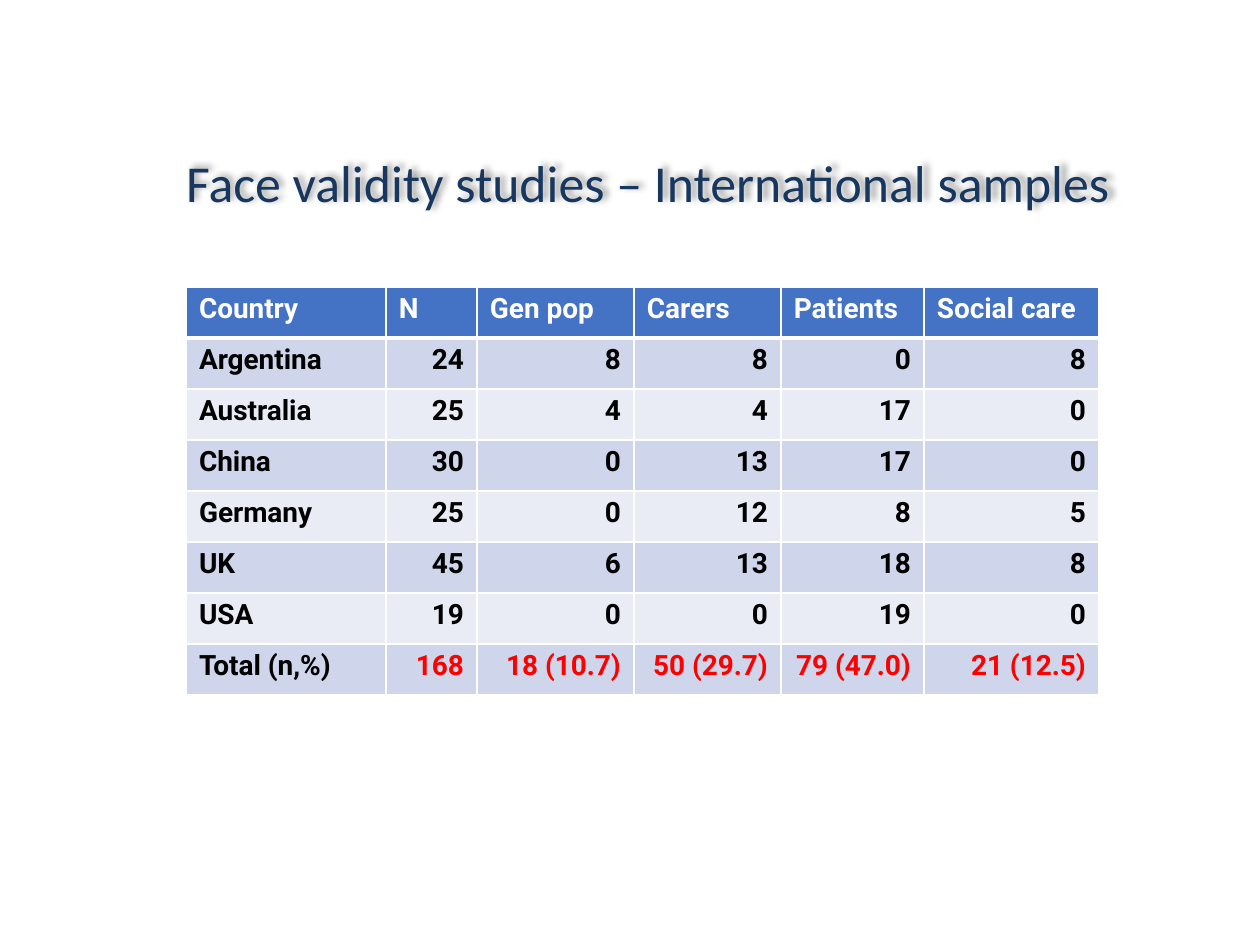
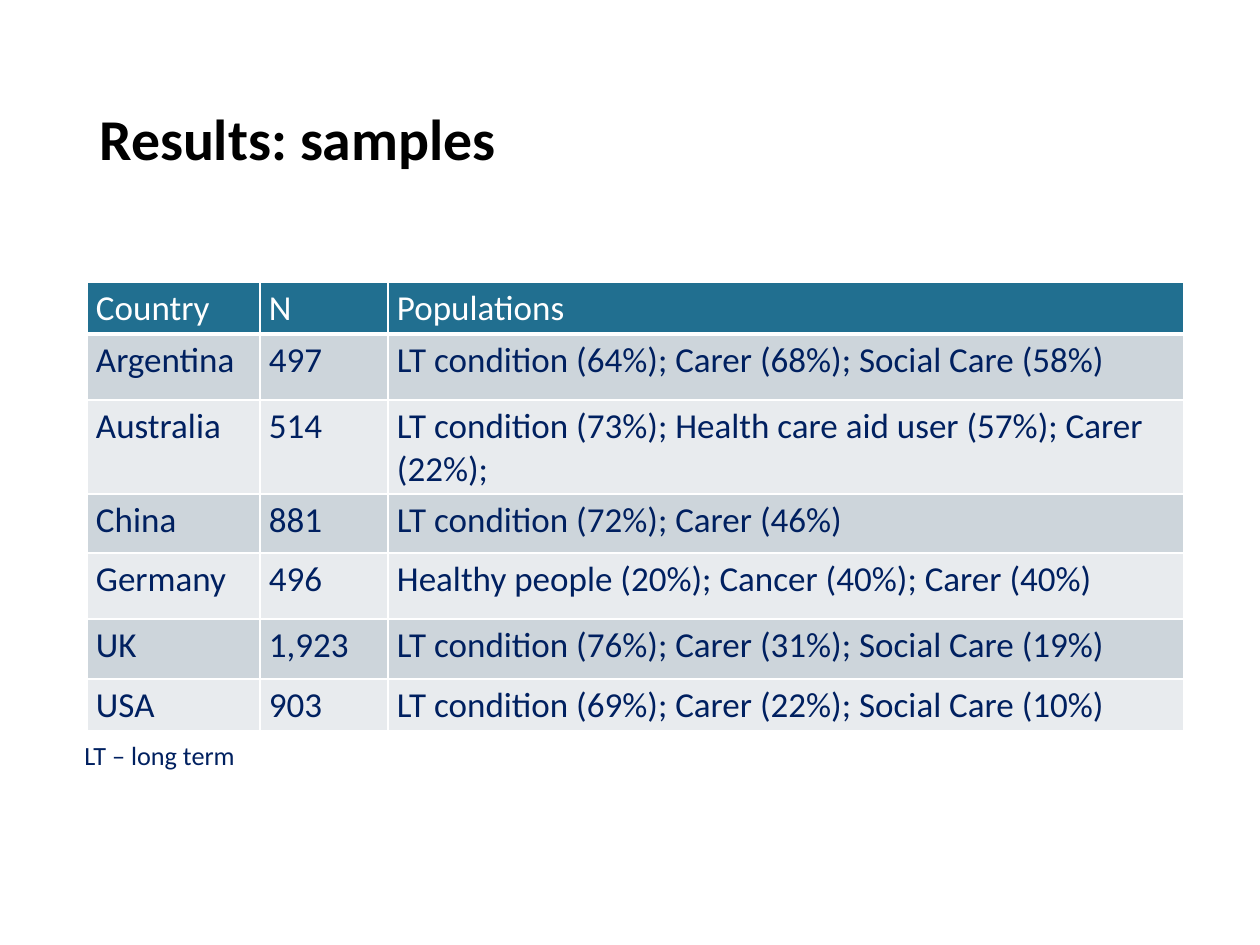
from lxml.etree import SubElement
from pptx import Presentation
from pptx.dml.color import RGBColor
from pptx.enum.text import MSO_ANCHOR, PP_ALIGN
from pptx.oxml import parse_xml
from pptx.oxml.ns import nsdecls, qn
from pptx.util import Emu, Pt

EMU_PER_PX = 914400 / 126
WHITE, BLACK, NAVY, RED = "FFFFFF", "000000", "002060", "FF0000"
TITLE_BLUE = "17375E"


def px(length):
    return Emu(round(length * EMU_PER_PX))


def color(code):
    return RGBColor.from_string(code)


prs = Presentation()
prs.slide_width, prs.slide_height = px(1260), px(945)
blank = prs.slide_layouts[6]

# Content of both slides
face_validity = dict(
    texts=[("Face validity studies – International samples", (100, 146, 1097, 72),
            29.6, TITLE_BLUE, False, PP_ALIGN.CENTER, 1.0, True)],
    origin=(186, 287), columns=[200, 91, 157, 147, 143, 175], heights=[51] * 8,
    margins=(13, 6), font="Roboto", size=16, bold=True, space_after=0,
    number_align=PP_ALIGN.RIGHT, body=BLACK, total=RED,
    header_fill="4472C4", bands=("CFD5EA", "E9EBF5"),
    rows=[
        ("Country", "N", "Gen pop", "Carers", "Patients", "Social care"),
        ("Argentina", "24", "8", "8", "0", "8"),
        ("Australia", "25", "4", "4", "17", "0"),
        ("China", "30", "0", "13", "17", "0"),
        ("Germany", "25", "0", "12", "8", "5"),
        ("UK", "45", "6", "13", "18", "8"),
        ("USA", "19", "0", "0", "19", "0"),
        ("Total (n,%)", "168", "18 (10.7)", "50 (29.7)", "79 (47.0)", "21 (12.5)"),
    ])
results = dict(
    texts=[("Results: samples", (87, 50, 1086, 183),
            33, BLACK, True, PP_ALIGN.LEFT, 0.9, False),
           ("LT – long term", (72, 733, 178, 44),
            15, NAVY, False, PP_ALIGN.LEFT, 1.0, False)],
    origin=(87, 282), columns=[173, 128, 796], heights=[50, 66, 54, 59, 66, 60, 50],
    margins=(9, 5), font="Calibri", size=20, bold=False, space_after=6,
    number_align=PP_ALIGN.LEFT, body=NAVY, total=NAVY,
    header_fill="216F90", bands=("CDD5DB", "E8EBEE"),
    rows=[
        ("Country", "N", "Populations"),
        ("Argentina", "497", "LT condition (64%); Carer (68%); Social Care (58%)"),
        ("Australia", "514",
         "LT condition (73%); Health care aid user (57%); Carer (22%);"),
        ("China", "881", "LT condition (72%); Carer (46%)"),
        ("Germany", "496", "Healthy people (20%); Cancer (40%); Carer (40%)"),
        ("UK", "1,923", "LT condition (76%); Carer (31%); Social Care (19%)"),
        ("USA", "903", "LT condition (69%); Carer (22%); Social Care (10%)"),
    ])

for study in (face_validity, results):
    slide = prs.slides.add_slide(blank)

    # Title and footnote
    for wording, place, size, ink, bold, align, spacing, shadowed in study["texts"]:
        box = slide.shapes.add_textbox(*map(px, place))
        box.text_frame.word_wrap = True
        box.text_frame.vertical_anchor = MSO_ANCHOR.MIDDLE
        line = box.text_frame.paragraphs[0]
        line.text = wording
        line.alignment, line.line_spacing = align, spacing
        line.font.name, line.font.size, line.font.bold = "Calibri", Pt(size), bold
        line.font.color.rgb = color(ink)
        if shadowed:
            box.fill.background()
            box.line.fill.background()
            box._element.spPr.append(parse_xml(
                f'<a:effectLst {nsdecls("a")}><a:outerShdw blurRad="50800" '
                'dist="38100" dir="18900000" algn="bl" rotWithShape="0">'
                '<a:srgbClr val="000000"><a:alpha val="40000"/></a:srgbClr>'
                '</a:outerShdw></a:effectLst>'))

    # Sample table
    rows, columns, heights = study["rows"], study["columns"], study["heights"]
    samples = slide.shapes.add_table(
        len(rows), len(columns), *map(px, study["origin"]),
        px(sum(columns)), px(sum(heights))).table
    for column, width in zip(samples.columns, columns):
        column.width = px(width)
    for row, height in zip(samples.rows, heights):
        row.height = px(height)

    for r, entries in enumerate(rows):
        for c, entry in enumerate(entries):
            cell = samples.cell(r, c)
            side, top = map(px, study["margins"])
            cell.margin_left = cell.margin_right = side
            cell.margin_top = cell.margin_bottom = top
            text = cell.text_frame.paragraphs[0]
            text.text = entry
            text.space_after = Pt(study["space_after"])
            text.font.name, text.font.size = study["font"], Pt(study["size"])
            text.font.bold = study["bold"]
            ink, fill = study["body"], study["bands"][(r - 1) % 2]
            if r == 0:
                ink, fill = WHITE, study["header_fill"]
            elif c > 0:
                text.alignment = study["number_align"]
                if r == len(rows) - 1:
                    ink = study["total"]
            text.font.color.rgb = color(ink)

            # White rules, heavier below the header; the fill follows them
            properties = cell._tc.get_or_add_tcPr()
            for edge in ("L", "R", "T", "B"):
                heavy = (r, edge) in ((0, "B"), (1, "T"))
                rule = SubElement(properties, qn(f"a:ln{edge}"),
                                  w=str(Pt(3 if heavy else 1)))
                SubElement(SubElement(rule, qn("a:solidFill")),
                           qn("a:srgbClr"), val=WHITE)
            cell.fill.solid()
            cell.fill.fore_color.rgb = color(fill)

prs.save("out.pptx")
